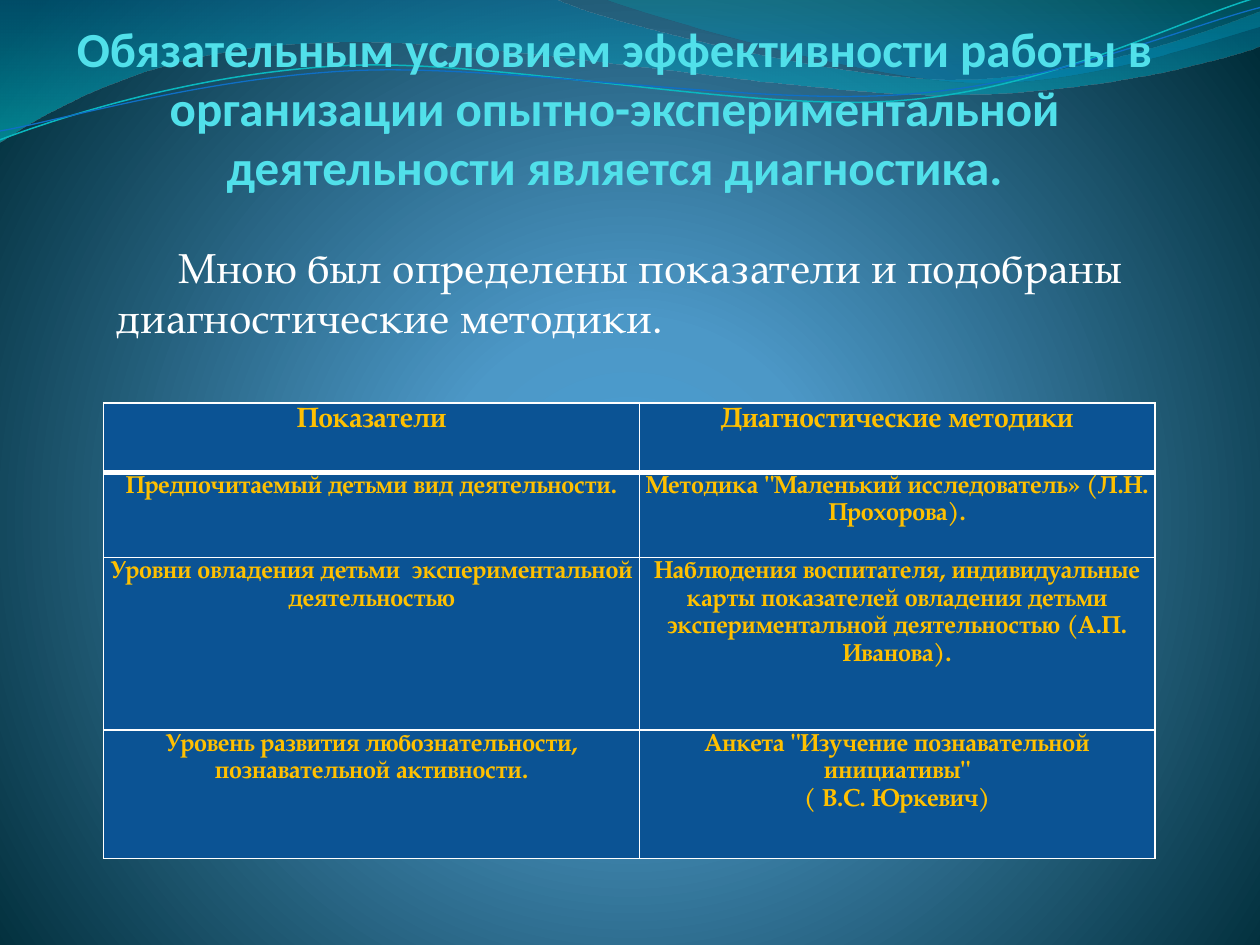
from lxml import etree
from pptx import Presentation
from pptx import util as u
from pptx.dml.color import RGBColor
from pptx.enum import text
from pptx.oxml import ns

SERIF, SANS = "TeX Gyre Pagella", "Calibri"
WHITE, GOLD, CYAN, NAVY = "FFFFFF", "FFC000", "51E0EA", "0B5394"
UNIT = u.Cm(0.0254)

# Wave outlines in 1/100 inch: a start, then Bezier curves (6 numbers) or lines (2).
BANDS = [
    ([(0, 0), (440, -1), (476, 17, 664, 63, 758, 63),
      (853, 63, 958, 26, 1000, 9), (1001, 36),
      (983, 44, 870, 76, 746, 75), (622, 75, 382, 28, 257, 34),
      (129, 36, 46, 83, -1, 113), (0, 0)],
     [(0, "0074A1", 45), (100, "00C6CF", 55)]),
    ([(479, -1), (509, 11, 682, 62, 769, 65),
      (856, 69, 961, 32, 1000, 21), (1000, 0), (479, -1)],
     [(0, "00A1A9", 30), (80, "008BBF", 45)]),
]
STRANDS = [
    ([(0, 111), (48, 93, 158, 57, 277, 52),
      (395, 47, 593, 89, 713, 80), (833, 71, 938, 15, 998, -2)],
     "0AB8BF", 0.85),
    ([(0, 104), (47, 96, 164, 61, 283, 56),
      (403, 51, 597, 84, 717, 75), (836, 67, 941, 21, 1000, 6)],
     "0F6FC6", 0.75),
]
TITLE = ("Обязательным условием эффективности работы в организации "
         "опытно-экспериментальной деятельности является диагностика.")
INTRO = "Мною был определены показатели и подобраны диагностические методики."
ROWS = [
    ("Показатели", "Диагностические методики"),
    ("Предпочитаемый детьми вид деятельности.",
     'Методика "Маленький исследователь» (Л.Н. Прохорова).'),
    ("Уровни овладения детьми  экспериментальной деятельностью",
     "Наблюдения воспитателя, индивидуальные карты показателей овладения детьми "
     "экспериментальной деятельностью (А.П. Иванова)."),
    ("Уровень развития любознательности, познавательной активности.",
     'Анкета "Изучение познавательной инициативы"\n( В.С. Юркевич)'),
]


def color(code):
    return RGBColor.from_string(code)


def add(parent, tag, **attrs):
    node = etree.SubElement(parent, ns.qn(tag))
    for key, val in attrs.items():
        node.set(key, str(val))
    return node


def blend(holder, stops, rect=None):
    """Swap the solid fill in holder for a gradient, radial if rect is given."""
    old = holder.find(ns.qn("a:solidFill"))
    grad = etree.Element(ns.qn("a:gradFill"), rotWithShape="1")
    items = add(grad, "a:gsLst")
    for pos, code, alpha in stops:
        stop = add(items, "a:gs", pos=pos * 1000)
        tint = add(stop, "a:srgbClr", val=code)
        if alpha < 100:
            add(tint, "a:alpha", val=alpha * 1000)
    if rect:
        way = add(grad, "a:path", path="circle")
        add(way, "a:fillToRect", **{k: v * 1000 for k, v in rect.items()})
    else:
        add(grad, "a:lin", ang=90 * 60000, scaled=1)
    holder.replace(old, grad)


def bend(shape, steps, left, top):
    """Turn the straight sides of a freeform into the Bezier curves in steps."""
    route = shape.element.spPr.find(".//" + ns.qn("a:path"))
    sides = route.findall(ns.qn("a:lnTo"))
    for side, step in zip(sides, steps[1:]):
        if len(step) == 6:
            curve = etree.Element(ns.qn("a:cubicBezTo"))
            for x, y in zip(step[::2], step[1::2]):
                add(curve, "a:pt", x=x - left, y=y - top)
            route.replace(side, curve)


class Deck:
    def __init__(self):
        self.file = Presentation()
        self.file.slide_width, self.file.slide_height = u.Cm(25.4), u.Cm(19.05)
        self.slide = self.file.slides.add_slide(self.file.slide_layouts[5])
        self.shapes = self.slide.shapes

    def ground(self, stops, rect):
        fill = self.slide.background.fill
        fill.solid()
        fill.fore_color.rgb = color(NAVY)
        blend(self.slide.element.find(".//" + ns.qn("p:bgPr")), stops, rect)

    def wave(self, steps, close):
        dots = [step[-2:] for step in steps]
        pen = self.shapes.build_freeform(*dots[0], scale=UNIT)
        pen.add_line_segments(dots[1:], close=close)
        shape = pen.convert_to_shape()
        bend(shape, steps, min(x for x, y in dots), min(y for x, y in dots))
        shape.shadow.inherit = False
        return shape

    def band(self, steps, stops):
        shape = self.wave(steps, True)
        shape.line.fill.background()
        shape.fill.solid()
        blend(shape.element.spPr, stops)

    def strand(self, steps, code, width):
        shape = self.wave(steps, False)
        shape.fill.background()
        shape.line.color.rgb = color(code)
        shape.line.width = u.Pt(width)

    def style(self, par, face, size, code, bold, align):
        par.alignment = align
        font = par.font
        font.name, font.size, font.bold = face, u.Pt(size), bold
        font.color.rgb = color(code)

    def title(self, words, left, top, width, height):
        box = self.shapes.title
        box.left, box.top = u.Cm(left), u.Cm(top)
        box.width, box.height = u.Cm(width), u.Cm(height)
        self.shapes.element.append(box.element)  # in front of the waves
        frame = box.text_frame
        frame.text = words
        frame.auto_size = text.MSO_AUTO_SIZE.NONE
        frame.vertical_anchor = text.MSO_ANCHOR.BOTTOM
        frame.margin_left = frame.margin_top = frame.margin_bottom = 0
        frame.margin_right = u.Cm(0.05)
        self.style(frame.paragraphs[0], SANS, 28, CYAN, True, text.PP_ALIGN.CENTER)

    def body(self, words, left, top, width, height):
        box = self.shapes.add_textbox(u.Cm(left), u.Cm(top), u.Cm(width), u.Cm(height))
        frame = box.text_frame
        frame.word_wrap = True
        frame.vertical_anchor = text.MSO_ANCHOR.MIDDLE
        frame.margin_bottom = u.Cm(0.88)
        frame.text = words
        par = frame.paragraphs[0]
        par._p.get_or_add_pPr().set("indent", str(u.Cm(1.24)))
        self.style(par, SERIF, 24, WHITE, False, text.PP_ALIGN.LEFT)

    def edge(self, cell, row):
        """Draw white cell borders, thick under the header row."""
        props = cell._tc.get_or_add_tcPr()
        sizes = {"L": 1, "R": 1, "T": 3 if row == 1 else 1, "B": 3 if row == 0 else 1}
        for i, (side, size) in enumerate(sizes.items()):
            line = add(props, "a:ln" + side, w=u.Pt(size))
            add(add(line, "a:solidFill"), "a:srgbClr", val=WHITE)
            props.insert(i, line)

    def table(self, rows, left, top, cols, heights):
        grid = self.shapes.add_table(
            len(rows), len(cols), u.Cm(left), u.Cm(top),
            u.Cm(sum(cols)), u.Cm(sum(heights))).table
        for col, width in zip(grid.columns, cols):
            col.width = u.Cm(width)
        for r, (words, height) in enumerate(zip(rows, heights)):
            grid.rows[r].height = u.Cm(height)
            for c, word in enumerate(words):
                cell = grid.cell(r, c)
                cell.text = word
                cell.margin_left = cell.margin_right = 0
                cell.margin_top = cell.margin_bottom = 0
                cell.fill.solid()
                cell.fill.fore_color.rgb = color(NAVY)
                self.edge(cell, r)
                for par in cell.text_frame.paragraphs:
                    par.line_spacing = 1.15
                    self.style(par, SERIF, 14 if r else 16, GOLD, True,
                               text.PP_ALIGN.CENTER)


def main():
    deck = Deck()
    deck.ground([(0, "4AA0D6", 100), (25, "4C98C7", 100), (100, "002C38", 100)],
                {"l": 10, "t": 110, "r": 10, "b": 100})
    for band in BANDS:
        deck.band(*band)
    for strand in STRANDS:
        deck.strand(*strand)
    deck.title(TITLE, 1.5, 0.33, 21.82, 3.61)
    deck.table(ROWS, 2.09, 8.12, (10.8, 10.39), (1.4, 1.72, 3.48, 2.59))
    deck.body(INTRO, 2.1, 4.72, 20.8, 3.07)
    deck.file.save("out.pptx")


if __name__ == "__main__":
    main()
